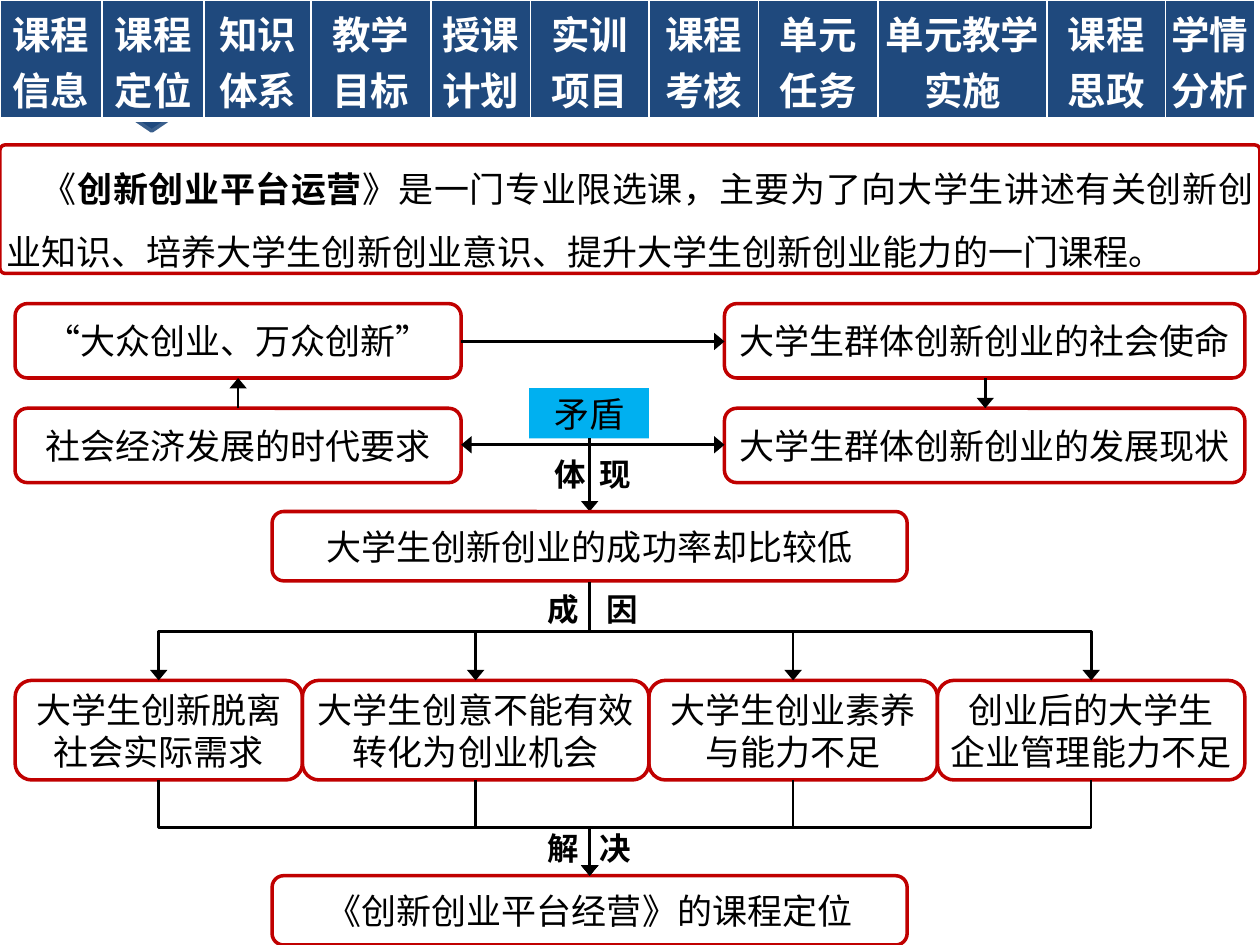
"""Build the course positioning slide with its navigation table and flow chart."""
from dataclasses import dataclass

from lxml.etree import SubElement
from pptx import Presentation
from pptx.dml.color import RGBColor
from pptx.enum.shapes import MSO_CONNECTOR, MSO_SHAPE
from pptx.enum.text import MSO_ANCHOR, PP_ALIGN
from pptx.oxml.ns import qn
from pptx.util import Inches, Pt


@dataclass(frozen=True)
class Theme:
    """Colours, fonts and sizes of the slide."""
    navy: str = "1F497D"
    navy_edge: str = "3A5F8C"
    red: str = "C00000"
    cyan: str = "00B0F0"
    black: str = "000000"
    white: str = "FFFFFF"
    cjk: str = "Noto Sans CJK SC"
    label_font: str = "Calibri"
    nav_font: str = "Times New Roman"
    nav: int = 22
    body: int = 20
    label: int = 18
    body_line: int = 24
    intro_line: int = 36
    box_edge: float = 2
    arrow: float = 1.5


class SlideBuilder:
    """Draws styled elements on the current slide."""

    def __init__(self, slide, theme):
        self.slide = slide
        self.theme = theme

    def style_run(self, r, size, name, color, bold=False):
        """Format one run."""
        r.font.size = Pt(size)
        r.font.name = name
        r.font.bold = bold
        r.font.color.rgb = RGBColor.from_string(color)
        if name == self.theme.cjk:
            SubElement(r.font._element, qn("a:ea"), typeface=name)

    def shape(self, kind, at, fill=None, line=None):
        """Add a preset shape without shadow."""
        sp = self.slide.shapes.add_shape(kind, *map(Inches, at))
        sp.shadow.inherit = False
        if fill:
            sp.fill.solid()
            sp.fill.fore_color.rgb = RGBColor.from_string(fill)
        else:
            sp.fill.background()
        if line:
            sp.line.color.rgb = RGBColor.from_string(line)
            sp.line.width = Pt(self.theme.box_edge)
        else:
            sp.line.fill.background()
        return sp

    def box(self, at, text):
        """Add a red rounded box with centred text."""
        t = self.theme
        sp = self.shape(MSO_SHAPE.ROUNDED_RECTANGLE, at, line=t.red)
        tf = sp.text_frame
        tf.word_wrap = True
        tf.vertical_anchor = MSO_ANCHOR.MIDDLE
        tf.margin_left = tf.margin_right = Inches(0.04)
        tf.margin_top = tf.margin_bottom = 0
        tf.text = text
        for p in tf.paragraphs:
            p.alignment = PP_ALIGN.CENTER
            p.line_spacing = Pt(t.body_line)
            for r in p.runs:
                self.style_run(r, t.body, t.cjk, t.black)
        return sp

    def intro(self, at, parts):
        """Add the justified introduction, whose second part is bold."""
        t = self.theme
        sp = self.box(at, "")
        sp.adjustments[0] = 0.04
        p = sp.text_frame.paragraphs[0]
        p.alignment = PP_ALIGN.JUSTIFY
        p.line_spacing = Pt(t.intro_line)
        p._p.get_or_add_pPr().set("indent", str(Inches(0.28)))
        for i, part in enumerate(parts):
            r = p.add_run()
            r.text = part
            self.style_run(r, t.body, t.cjk, t.black, bold=i == 1)

    def tag(self, at, text):
        """Add a filled rectangle with a keyword."""
        t = self.theme
        tf = self.shape(MSO_SHAPE.RECTANGLE, at, fill=t.cyan).text_frame
        tf.vertical_anchor = MSO_ANCHOR.MIDDLE
        tf.text = text
        p = tf.paragraphs[0]
        p.alignment = PP_ALIGN.CENTER
        self.style_run(p.runs[0], t.body, t.label_font, t.black)

    def label(self, at, left, right, spacing):
        """Add a bold label whose two halves flank an arrow."""
        t = self.theme
        tf = self.slide.shapes.add_textbox(*map(Inches, at)).text_frame
        tf.word_wrap = False
        tf.vertical_anchor = MSO_ANCHOR.MIDDLE
        p = tf.paragraphs[0]
        p.alignment = PP_ALIGN.CENTER
        for text in (left + " ", right):
            r = p.add_run()
            r.text = text
            self.style_run(r, t.label, t.label_font, t.black, bold=True)
        p.runs[0].font._element.set("spc", str(spacing * 100))

    def arrow(self, start, end, both=False, kind=MSO_CONNECTOR.STRAIGHT):
        """Add a black connector with an arrowhead at its end."""
        cx = self.slide.shapes.add_connector(kind, *map(Inches, (*start, *end)))
        cx.line.color.rgb = RGBColor.from_string(self.theme.black)
        cx.line.width = Pt(self.theme.arrow)
        ln = cx.line._get_or_add_ln()
        for end_tag in ("a:headEnd", "a:tailEnd")[0 if both else 1:]:
            SubElement(ln, qn(end_tag), type="triangle", w="lg", len="med")
        SubElement(cx._element.spPr, qn("a:effectLst"))
        return cx

    def elbow(self, start, end):
        """Add a downward elbow arrow that leaves and arrives vertically."""
        (x1, y1), (x2, y2) = start, end
        mid_x, mid_y = (x1 + x2) / 2, (y1 + y2) / 2
        half_w, half_h = (y2 - y1) / 2, abs(x2 - x1) / 2
        cx = self.arrow((mid_x - half_w, mid_y - half_h),
                        (mid_x + half_w, mid_y + half_h),
                        kind=MSO_CONNECTOR.ELBOW)
        xfrm = cx._element.spPr.find(qn("a:xfrm"))
        xfrm.set("rot", str((270 if x2 > x1 else 90) * 60000))
        if x2 > x1:
            xfrm.set("flipH", "1")

    def nav_table(self, at, widths, titles):
        """Add the one-row navigation table."""
        t = self.theme
        frame = self.slide.shapes.add_table(1, len(titles), *map(Inches, at))
        table = frame.table
        table.first_row = table.horz_banding = False
        for i, (width, title) in enumerate(zip(widths, titles)):
            table.columns[i].width = Inches(width)
            cell = table.cell(0, i)
            cell.margin_left = cell.margin_right = Inches(0.04)
            cell.margin_top = cell.margin_bottom = Inches(0.04)
            cell.text = title
            for p in cell.text_frame.paragraphs:
                p.alignment = PP_ALIGN.CENTER
                self.style_run(p.runs[0], t.nav, t.nav_font, t.white, bold=True)
            tc_pr = cell._tc.get_or_add_tcPr()
            for side, points in (("L", 1), ("R", 1), ("T", 1), ("B", 3)):
                ln = SubElement(tc_pr, qn(f"a:ln{side}"), w=str(Pt(points)))
                SubElement(SubElement(ln, qn("a:solidFill")),
                           qn("a:srgbClr"), val=t.white)
            cell.fill.solid()
            cell.fill.fore_color.rgb = RGBColor.from_string(t.navy)


def main():
    """Build and save the slide."""
    prs = Presentation()
    prs.slide_width, prs.slide_height = Inches(10), Inches(7.5)
    theme = Theme()
    s = SlideBuilder(prs.slides.add_slide(prs.slide_layouts[6]), theme)

    s.shape(MSO_SHAPE.FLOWCHART_MERGE, (0.91, 0.84, 0.59, 0.2), theme.navy, theme.navy_edge)
    s.intro((0, 1.15, 10, 1.02), (
        "《", "创新创业平台运营",
        "》是一门专业限选课，主要为了向大学生讲述有关创新创业知识、"
        "培养大学生创新创业意识、提升大学生创新创业能力的一门课程。"))

    for y, left, right in (
            (2.41, "“大众创业、万众创新”", "大学生群体创新创业的社会使命"),
            (3.24, "社会经济发展的时代要求", "大学生群体创新创业的发展现状")):
        s.box((0.12, y, 3.54, 0.59), left)
        s.box((5.75, y, 4.13, 0.59), right)
    s.arrow((1.89, 3.24), (1.89, 3))
    s.arrow((3.66, 2.71), (5.75, 2.71))
    s.arrow((7.82, 3), (7.82, 3.24))
    s.arrow((3.66, 3.53), (5.75, 3.53), both=True)

    axis = 4.68
    s.tag((4.2, 3.08, 0.95, 0.4), "矛盾")
    s.arrow((axis, 3.48), (axis, 4.06))
    s.box((2.16, 4.06, 5.04, 0.55), "大学生创新创业的成功率却比较低")
    s.box((2.16, 6.95, 5.04, 0.55), "《创新创业平台经营》的课程定位")

    left = 0.12
    for width, cause in ((2.28, "大学生创新脱离社会实际需求"),
                         (2.75, "大学生创意不能有效转化为创业机会"),
                         (2.29, "大学生创业素养与能力不足"),
                         (2.44, "创业后的大学生\n企业管理能力不足")):
        s.box((left, 5.4, width, 0.79), cause)
        center = left + width / 2
        s.elbow((axis, 4.62), (center, 5.4))
        s.elbow((center, 6.19), (axis, 6.95))
        left += width

    s.label((4.23, 3.56, 0.95, 0.41), "体", "现", 2)
    s.label((4.23, 4.69, 0.95, 0.29), "成", "因", 6)
    s.label((4.2, 6.56, 0.95, 0.34), "解", "决", 4)

    s.nav_table((0, 0, 9.96, 0.95),
                (0.81, 0.81, 0.85, 0.95, 0.79, 0.94, 0.87, 0.95, 1.34, 0.94, 0.71),
                ("课程\n信息", "课程\n定位", "知识\n体系", "教学\n目标", "授课\n计划", "实训\n项目",
                 "课程\n考核", "单元\n任务", "单元教学\n实施", "课程思政", "学情分析"))
    prs.save("out.pptx")


if __name__ == "__main__":
    main()
